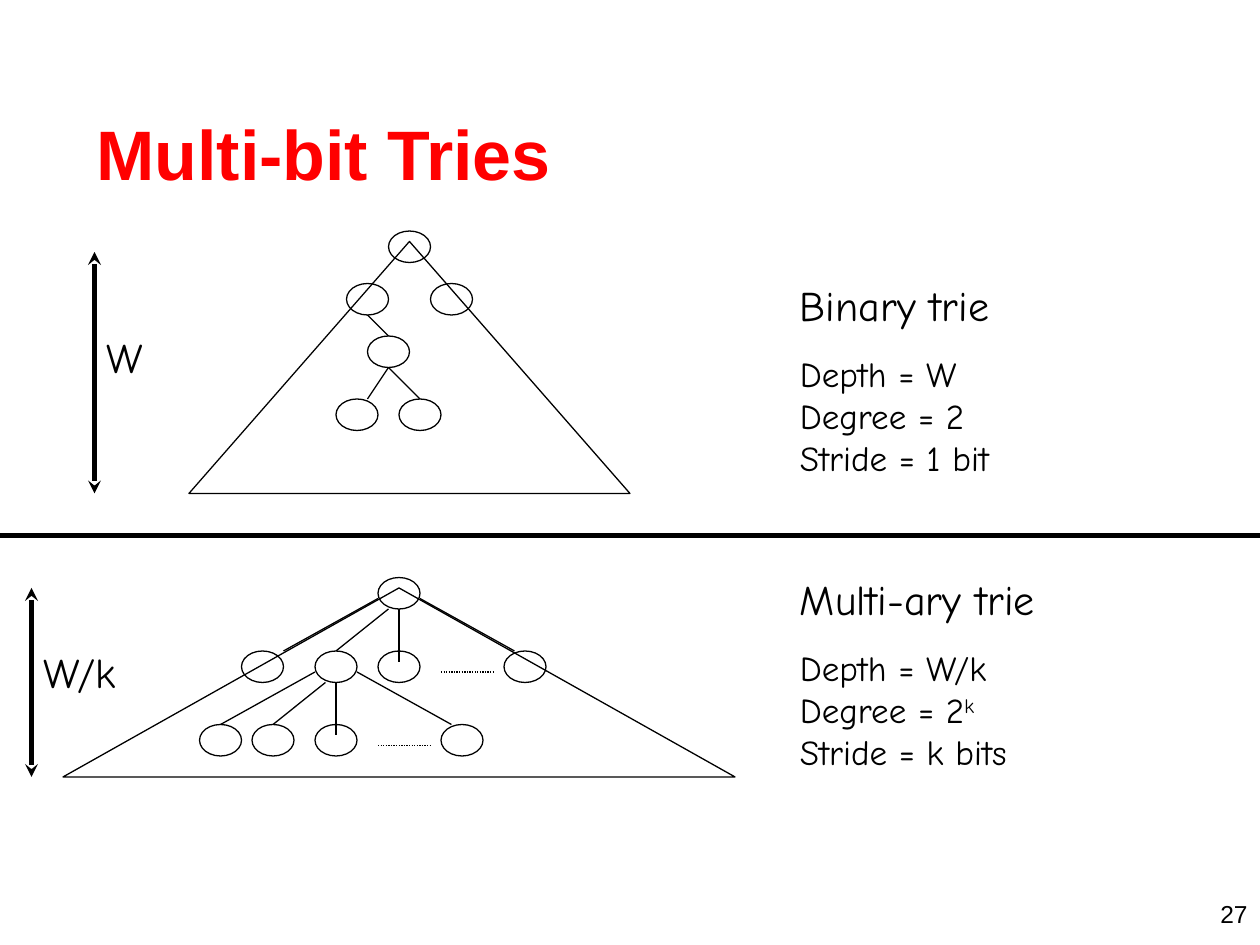
from dataclasses import dataclass, field

from lxml import etree
from pptx import Presentation
from pptx.dml.color import RGBColor
from pptx.enum.dml import MSO_LINE
from pptx.enum.shapes import MSO_CONNECTOR, MSO_SHAPE
from pptx.enum.text import MSO_ANCHOR, MSO_AUTO_SIZE, PP_ALIGN
from pptx.oxml.ns import qn
from pptx.util import Cm, Length, Pt

STRAIGHT = MSO_CONNECTOR.STRAIGHT
TRIANGLE, OVAL = MSO_SHAPE.ISOSCELES_TRIANGLE, MSO_SHAPE.OVAL
DOTTED = MSO_LINE.ROUND_DOT
LEFT, RIGHT = PP_ALIGN.LEFT, PP_ALIGN.RIGHT

# Everything sits on a grid of 120 x 90 units, twelve units to the inch
UNIT_CM = 2.54 / 12
NODE_SIZE = (4, 3)

Point = tuple[float, float]
Box = tuple[float, float, float, float]
Link = tuple[Point, Point]


@dataclass(frozen=True)
class Theme:
    ink: RGBColor = RGBColor(0, 0, 0)
    accent: RGBColor = RGBColor(255, 0, 0)
    title_font: str = "Arial"
    body_font: str = "Comic Neue"
    title_size: int = 40
    heading_size: int = 24
    facts_size: int = 20
    number_size: int = 14
    thin: float = 0.75
    arrow: float = 2.5
    divider: float = 3


@dataclass(frozen=True)
class Trie:
    heading: str
    heading_width: float
    facts: list[str]
    facts_width: float
    text_top: float
    outline: Box
    depth_label: str
    depth_label_box: Box
    depth_arrow: Link
    nodes: list[Point]
    links: list[Link]
    ellipses: list[Link] = field(default_factory=list)


THEME = Theme()


def grid(units: float) -> Length:
    return Cm(units * UNIT_CM)


def place(box: Box) -> list[Length]:
    return [grid(units) for units in box]


def style_runs(frame, font: str, size: float, color: RGBColor, bold: bool = False) -> None:
    for paragraph in frame.paragraphs:
        for run in paragraph.runs:
            run.font.name = font
            run.font.size = Pt(size)
            run.font.bold = bold
            run.font.color.rgb = color


def draw_text(shapes, box: Box, text: str, size: float, font: str = THEME.body_font):
    frame = shapes.add_textbox(*place(box)).text_frame
    frame.text = text
    frame.word_wrap = False
    frame.auto_size = MSO_AUTO_SIZE.SHAPE_TO_FIT_TEXT
    style_runs(frame, font, size, THEME.ink)
    return frame


def draw_outline(shapes, kind, box: Box) -> None:
    shape = shapes.add_shape(kind, *place(box))
    shape.shadow.inherit = False
    shape.fill.background()
    shape.line.color.rgb = THEME.ink
    shape.line.width = Pt(THEME.thin)


def draw_line(shapes, link: Link, width: float = THEME.thin, dotted: bool = False,
              arrows: bool = False) -> None:
    start, end = link
    line = shapes.add_connector(STRAIGHT, *place((*start, *end)))
    line.line.color.rgb = THEME.ink
    line.line.width = Pt(width)
    if dotted:
        line.line.dash_style = DOTTED
    if arrows:
        for tag in ("a:headEnd", "a:tailEnd"):
            etree.SubElement(line.line._get_or_add_ln(), qn(tag), type="stealth")
    etree.SubElement(line._element.spPr, qn("a:effectLst"))


def shifted(origin: Point, offsets: list[Link]) -> list[Link]:
    x, y = origin
    return [((x + a, y + b), (x + c, y + d)) for (a, b), (c, d) in offsets]


def draw_trie(shapes, trie: Trie) -> None:
    draw_outline(shapes, TRIANGLE, trie.outline)
    for node in trie.nodes:
        draw_outline(shapes, OVAL, (*node, *NODE_SIZE))
    for link in trie.links:
        draw_line(shapes, link)
    for gap in trie.ellipses:
        draw_line(shapes, gap, dotted=True)

    # Depth measure on the left
    draw_line(shapes, trie.depth_arrow, THEME.arrow, arrows=True)
    draw_text(shapes, trie.depth_label_box, trie.depth_label, THEME.heading_size)

    # Heading and facts on the right; "^" marks a superscript ending
    draw_text(shapes, (75, trie.text_top, trie.heading_width, 6), trie.heading,
              THEME.heading_size)
    facts = draw_text(shapes, (75, trie.text_top + 7, trie.facts_width, 13.2),
                      "\n".join(fact.partition("^")[0] for fact in trie.facts),
                      THEME.facts_size)
    for paragraph, fact in zip(facts.paragraphs, trie.facts):
        exponent = fact.partition("^")[2]
        if exponent:
            run = paragraph.add_run()
            run.text = exponent
            run._r.get_or_add_rPr().set("baseline", "30000")
    style_runs(facts, THEME.body_font, THEME.facts_size, THEME.ink)


BINARY = Trie(
    heading="Binary trie", heading_width=22.5,
    facts=["Depth = W", "Degree = 2", "Stride = 1 bit"], facts_width=23.3,
    text_top=26, outline=(18, 23, 42, 24),
    depth_label="W", depth_label_box=(9, 31, 6.6, 6), depth_arrow=((9, 24), (9, 47)),
    nodes=[(37, 22), (41, 27), (33, 27), (35, 32), (32, 38), (38, 38)],
    links=[((35, 30), (37, 32)), ((37, 35), (35, 38)), ((37, 35), (40, 38))],
)

# Both parents of the multi-ary trie fan out in the same way
ROOT, PARENT = (36, 55), (30, 62)
FAN = [((2, 3), (2, 8)), ((1, 3), (-4, 7)), ((0, 2), (-9, 7)), ((4, 2), (13, 7))]
GAP = [((6, 9), (11, 9))]

MULTI_ARY = Trie(
    heading="Multi-ary trie", heading_width=28.2,
    facts=["Depth = W/k", "Degree = 2^k", "Stride = k bits"], facts_width=25.2,
    text_top=54, outline=(6, 56, 64, 18),
    depth_label="W/k", depth_label_box=(3, 61, 10.8, 6), depth_arrow=((3, 56), (3, 74)),
    nodes=[ROOT, *((x, 62) for x in (23, 30, 36, 48)),
           *((x, 69) for x in (19, 24, 30, 42))],
    links=shifted(ROOT, FAN) + shifted(PARENT, FAN),
    ellipses=shifted(ROOT, GAP) + shifted(PARENT, GAP),
)


def main() -> None:
    deck = Presentation()
    deck.slide_width, deck.slide_height = grid(120), grid(90)
    slide = deck.slides.add_slide(deck.slide_layouts[5])

    # Title
    title = slide.shapes.title
    title.left, title.top, title.width, title.height = place((8, 7, 102, 15))
    heading = title.text_frame
    heading.text = "Multi-bit Tries"
    heading.auto_size = MSO_AUTO_SIZE.NONE
    heading.vertical_anchor = MSO_ANCHOR.MIDDLE
    heading.paragraphs[0].alignment = LEFT
    style_runs(heading, THEME.title_font, THEME.title_size, THEME.accent, bold=True)

    # Binary trie above the divider, multi-ary trie below it
    draw_trie(slide.shapes, BINARY)
    lower_half = slide.shapes.add_group_shape().shapes
    draw_line(lower_half, ((0, 51), (120, 51)), THEME.divider)
    draw_trie(lower_half, MULTI_ARY)

    # Slide number
    number = draw_text(slide.shapes, (92, 85, 28, 3), "27", THEME.number_size,
                       THEME.title_font)
    number.word_wrap = True
    number.auto_size = MSO_AUTO_SIZE.NONE
    number.paragraphs[0].alignment = RIGHT

    deck.save("out.pptx")


if __name__ == "__main__":
    main()
